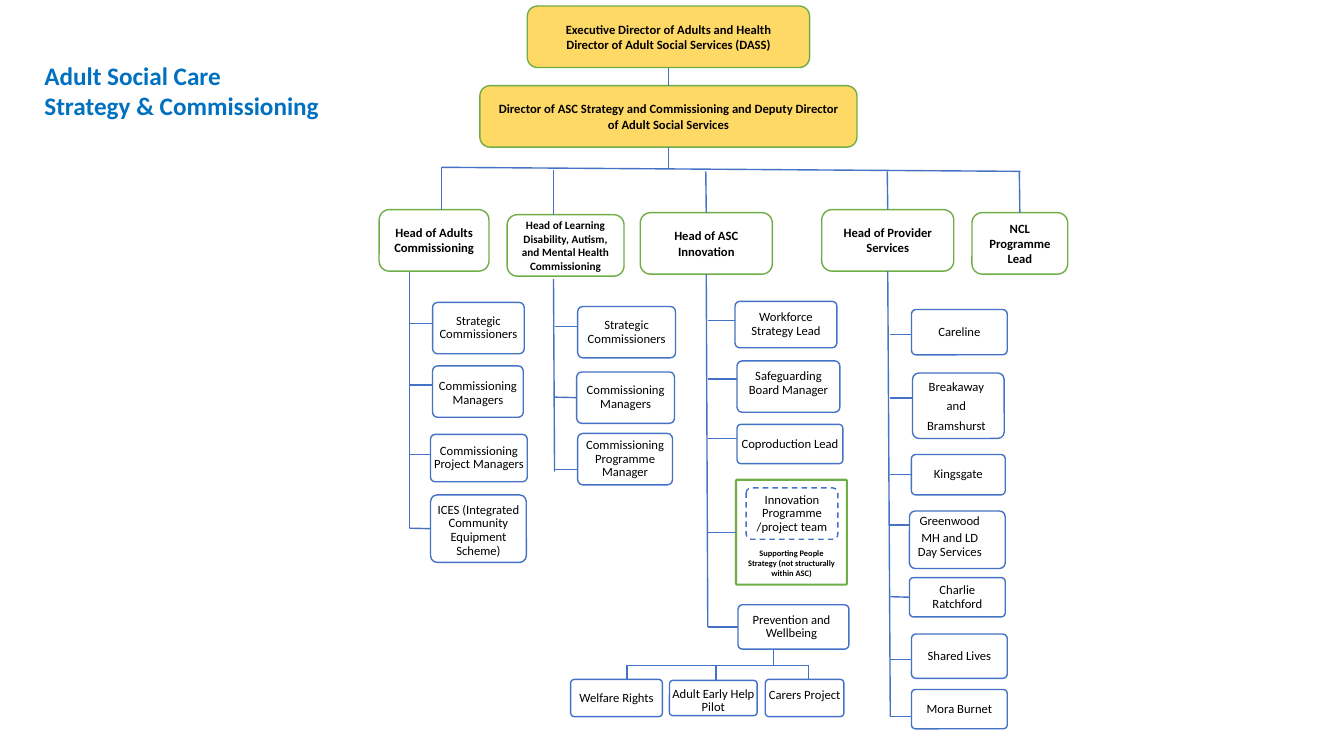
from pptx import Presentation
from pptx.dml.color import RGBColor
from pptx.enum.dml import MSO_LINE
from pptx.enum.shapes import MSO_CONNECTOR, MSO_SHAPE
from pptx.enum.text import MSO_ANCHOR, MSO_AUTO_SIZE, PP_ALIGN
from pptx.oxml.ns import qn
from pptx.util import Pt

PX = 9144  # EMU per px, 100 px to the inch
ROUNDED = MSO_SHAPE.ROUNDED_RECTANGLE
STRAIGHT = MSO_CONNECTOR.STRAIGHT
DASH = MSO_LINE.DASH
TOP_ANCHOR, MIDDLE, BOTTOM_ANCHOR = MSO_ANCHOR.TOP, MSO_ANCHOR.MIDDLE, MSO_ANCHOR.BOTTOM
NO_AUTOFIT = MSO_AUTO_SIZE.NONE
CENTER, LEFT_ALIGN = PP_ALIGN.CENTER, PP_ALIGN.LEFT
TOP, LEFT, BOTTOM = 0, 1, 2

THEME = {
    "font": "Calibri",
    "title": RGBColor(0x00, 0x70, 0xC0),
    "text": RGBColor(0x00, 0x00, 0x00),
    "gold": RGBColor(0xFF, 0xD9, 0x66),
    "white": RGBColor(0xFF, 0xFF, 0xFF),
    "green": RGBColor(0x70, 0xAD, 0x47),
    "blue": RGBColor(0x44, 0x72, 0xC4),
    "title_size": 18,
    "box_size": 9,
    "small_size": 8,
    "note_size": 6,
}
HEAD_INSETS = (10, 5, 10, 5)
ROLE_INSETS = (2, 1, 2, 1)
TIGHT = (0, 1, 0, 1)


def add_box(text, left, top, width, height, fill="white", edge="blue", size="box_size",
            bold=False, corner=0.1, insets=ROLE_INSETS, spacing=0.9, after=3):
    """Rounded box whose text has one paragraph per line."""
    box = slide.shapes.add_shape(ROUNDED, left * PX, top * PX, width * PX, height * PX)
    box.shadow.inherit = False
    box.adjustments[0] = corner
    box.fill.solid()
    box.fill.fore_color.rgb = THEME[fill]
    box.line.color.rgb = THEME[edge]
    box.line.width = Pt(1)
    frame = box.text_frame
    frame.word_wrap = True
    frame.vertical_anchor = MIDDLE
    frame.margin_left, frame.margin_top, frame.margin_right, frame.margin_bottom = (
        inset * PX for inset in insets)
    for number, line in enumerate(text.split("\n")):
        paragraph = frame.add_paragraph() if number else frame.paragraphs[0]
        paragraph.alignment = CENTER
        paragraph.line_spacing = spacing
        paragraph.space_after = Pt(after)
        run = paragraph.add_run()
        run.text = line
        run.font.name = THEME["font"]
        run.font.size = Pt(THEME[size])
        run.font.bold = bold
        run.font.color.rgb = THEME["text"]
    return box


def add_link(x1, y1, x2, y2, start=None, end=None):
    """Straight line; start and end are optional (box, side) joints."""
    link = slide.shapes.add_connector(STRAIGHT, x1 * PX, y1 * PX, x2 * PX, y2 * PX)
    link.line.color.rgb = THEME["blue"]
    link.line.width = Pt(1)
    properties = link._element.spPr
    properties.append(properties.makeelement(qn("a:effectLst"), {}))
    if start:
        link.begin_connect(*start)
    if end:
        link.end_connect(*end)


prs = Presentation()
prs.slide_width, prs.slide_height = 1333 * PX, 750 * PX
slide = prs.slides.add_slide(prs.slide_layouts[5])

# Title
title = slide.shapes.title
title.left, title.top, title.width, title.height = 34 * PX, 55 * PX, 323 * PX, 101 * PX
title_frame = title.text_frame
title_frame.word_wrap = True
title_frame.auto_size = NO_AUTOFIT
title_frame.vertical_anchor = TOP_ANCHOR
for number, line in enumerate(["Adult Social Care", "Strategy & Commissioning"]):
    paragraph = title_frame.add_paragraph() if number else title_frame.paragraphs[0]
    paragraph.alignment = LEFT_ALIGN
    run = paragraph.add_run()
    run.text = line
    run.font.name = THEME["font"]
    run.font.size = Pt(THEME["title_size"])
    run.font.bold = True
    run.font.color.rgb = THEME["title"]

# Directors
LEADER = dict(edge="green", bold=True, corner=0.167, insets=HEAD_INSETS, spacing=1.0, after=0)
executive = add_box("Executive Director of Adults and Health\nDirector of Adult Social Services (DASS)",
                    523, 6, 280, 61, fill="gold", **LEADER)
director = add_box("Director of ASC Strategy and Commissioning and Deputy Director of Adult Social Services",
                   476, 85, 374, 61, fill="gold", **LEADER)
add_link(663, 67, 663, 85, (executive, BOTTOM), (director, TOP))
add_link(663, 146, 663, 168, (director, BOTTOM))
add_link(438, 166, 1012, 170)

# Innovation team, framed together with its note
team_frame = add_box("Supporting People Strategy (not structurally within ASC)", 730, 476, 110, 104,
                     **{**LEADER, "corner": 0.012, "size": "note_size", "insets": (10, 5, 10, 6)})
team_frame.line.width = Pt(1.5)
team_frame.text_frame.vertical_anchor = BOTTOM_ANCHOR
team = add_box("Innovation Programme /project team", 740, 484, 91, 51)
team.line.dash_style = DASH

# Heads: text, left, top, width, type size, drop (x, y from the bus), spine (x1, y1, x2, y2)
# Roles: box or its text, left, top, width, height, branch y, options
heads = [
    ("Head of Adults Commissioning", 376, 208, 109, "box_size", (438, 166), (406, 270, 406, 524), [
        ("Strategic Commissioners", 429, 300, 91, 51, 321, {}),
        ("Commissioning Managers", 429, 363, 90, 51, 382, {"insets": (2, 5, 2, 1)}),
        ("Commissioning Project Managers", 427, 431, 96, 47, 451, {"insets": TIGHT}),
        ("ICES (Integrated Community Equipment Scheme)", 427, 491, 95, 67, 524, {"insets": (2, 5, 2, 1)}),
    ]),
    ("Head of Learning Disability, Autism, and Mental Health Commissioning", 503, 213, 116, "small_size",
     (549, 169), (549, 277, 550, 468), [
        ("Strategic Commissioners", 573, 304, 97, 51, 324, {}),
        ("Commissioning Managers", 572, 369, 97, 51, 396, {}),
        ("Commissioning Programme Manager", 573, 430, 94, 51, 466, {}),
    ]),
    ("Head of ASC Innovation", 635, 211, 131, "box_size", (700, 170), (700, 272, 702, 622), [
        ("Workforce Strategy Lead", 729, 299, 101, 46, 318, {}),
        ("Safeguarding Board Manager", 731, 358, 102, 51, 376, {"insets": (2, 1, 2, 7)}),
        ("Coproduction Lead", 731, 421, 105, 39, 435, {"insets": TIGHT}),
        (team_frame, 730, 476, 110, 104, 529, {}),
        ("Prevention and Wellbeing", 732, 600, 110, 44, 621, {"insets": (2, 1, 6, 1)}),
    ]),
    ("Head of Provider Services", 815, 208, 131, "box_size", (880, 170), (880, 269, 883, 711), [
        ("Careline", 904, 307, 95, 45, 332, {}),
        ("Breakaway\nand\nBramshurst", 905, 370, 91, 65, 395, {"insets": (2, 1, 6, 1), "spacing": 1.0}),
        ("Kingsgate", 904, 451, 93, 40, 469, {}),
        ("Greenwood\nMH and LD Day Services", 902, 507, 95, 57, 521, {"insets": (6, 1, 21, 7)}),
        ("Charlie Ratchford", 902, 573, 95, 39, 590, {"insets": (3, 1, 3, 1)}),
        ("Shared Lives", 904, 629, 95, 44, 654, {}),
        ("Mora Burnet", 904, 684, 95, 39, 711, {}),
    ]),
    ("NCL Programme Lead", 964, 211, 95, "box_size", (1011, 170), None, []),
]
for text, left, top, width, size, (drop_x, bus_y), spine, roles in heads:
    head = add_box(text, left, top, width, 61, size=size, **LEADER)
    middle = left + width // 2
    add_link(drop_x, bus_y, drop_x, top, end=(head, TOP) if drop_x == middle else None)
    if spine:
        add_link(*spine, start=(head, BOTTOM) if spine[0] == middle else None)
    for role, role_left, role_top, role_width, role_height, branch_y, options in roles:
        if isinstance(role, str):
            role = add_box(role, role_left, role_top, role_width, role_height, **options)
        role_middle = role_top + role_height // 2
        joined = abs(branch_y - role_middle) <= 2
        if joined:
            branch_y = role_middle
        add_link(spine[2], branch_y, role_left, branch_y, end=(role, LEFT) if joined else None)

# Services under Prevention and Wellbeing
add_link(767, 644, 767, 660)
add_link(622, 660, 802, 660)
services = [
    ("Welfare Rights", 566, 674, 91, 37, 622, ROLE_INSETS),
    ("Adult Early Help Pilot", 664, 675, 87, 35, 710, (0, 6, 0, 0)),
    ("Carers Project", 759, 674, 78, 37, 802, (0, 1, 0, 7)),
]
for text, left, top, width, height, drop_x, insets in services:
    add_box(text, left, top, width, height, insets=insets)
    add_link(drop_x, 660, drop_x, top)

prs.save("out.pptx")
